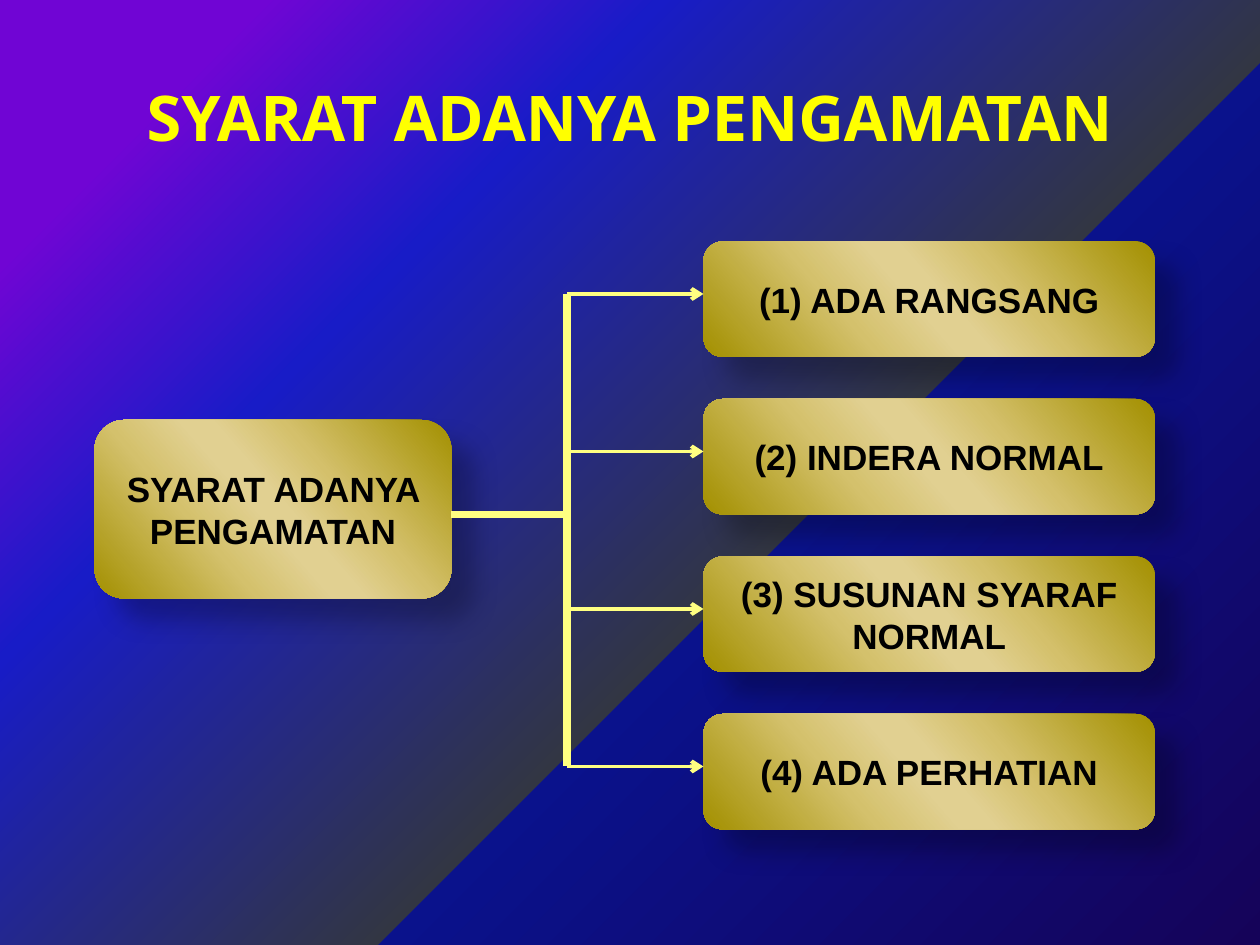
from lxml.etree import SubElement
from pptx import Presentation
from pptx.dml.color import RGBColor
from pptx.enum.shapes import MSO_CONNECTOR as CONN, MSO_SHAPE as SHAPE
from pptx.enum.text import MSO_ANCHOR as ANCHOR, PP_ALIGN as ALIGN
from pptx.oxml.ns import qn
from pptx.util import Inches, Pt

COLORS = {"title": "FFFF00", "text": "000000", "line": "FFFF81", "shadow": "000000"}
BACKDROP = [(0, "150359"), (40, "0A128C"), (40, "323643"), (70, "181CC7"), (88, "7005D4")]
GOLD = [(0, "A39000"), (33, "D4C06B"), (47, "E1D091"), (53, "E1D091"), (68, "D4C16C"), (100, "A39000")]
CONDITIONS = ["(1) ADA RANGSANG", "(2) INDERA NORMAL", "(3) SUSUNAN SYARAF NORMAL", "(4) ADA PERHATIAN"]
COLS, ROWS = 120, 90
PITCH = 15


def grid(*cells):
    """Turn grid cells, twelve to the inch, into lengths."""
    return [Inches(c / 12) for c in cells]


def add(parent, tag, **attrs):
    """Append a DrawingML child with the given attributes."""
    return SubElement(parent, qn(f"a:{tag}"), {k: str(v) for k, v in attrs.items()})


def set_gradient(fill, holder, stops):
    """Give a fill the listed stops and return its emptied gradient element."""
    fill.gradient()
    grad = next(holder.iter(qn("a:gradFill")))
    for child in list(grad):
        grad.remove(child)
    gs_list = add(grad, "gsLst")
    for pos, color in stops:
        add(add(gs_list, "gs", pos=pos * 1000), "srgbClr", val=color)
    return grad


def paint_background(slide):
    """Spread the backdrop colours from the lower right corner."""
    grad = set_gradient(slide.background.fill, slide.element, BACKDROP)
    add(add(grad, "path", path="circle"), "fillToRect", l=100000, t=100000)
    add(grad, "tileRect", r=-100000, b=-100000)


def set_text(s, text, font, size, color):
    """Write bold centred text in the middle of a shape."""
    tf = s.text_frame
    tf.word_wrap = True
    tf.vertical_anchor = ANCHOR.MIDDLE
    p = tf.paragraphs[0]
    p.text = text
    p.alignment = ALIGN.CENTER
    f = p.runs[0].font
    f.name, f.size, f.bold = font, Pt(size), True
    f.color.rgb = RGBColor.from_string(COLORS[color])


def add_title(slide, box, text):
    """Place the slide heading in its box."""
    set_text(slide.shapes.add_textbox(*grid(*box)), text, "Open Sans", 36, "title")


def add_card(slide, box, text):
    """Place a rounded gold card with a soft shadow."""
    s = slide.shapes.add_shape(SHAPE.ROUNDED_RECTANGLE, *grid(*box))
    grad = set_gradient(s.fill, s.element.spPr, GOLD)
    add(grad, "lin", ang=139 * 60000, scaled=0)
    s.line.fill.background()
    s.shadow.inherit = False
    shadow = add(s.element.spPr.find(qn("a:effectLst")), "outerShdw", blurRad=Pt(15),
                 dist=Pt(18), dir=45 * 60000, algn="tl", rotWithShape=0)
    add(add(shadow, "srgbClr", val=COLORS["shadow"]), "alpha", val=26000)
    set_text(s, text, "Arial", 20, "text")


def add_line(slide, ends, width, arrow=False):
    """Draw a straight line, with an arrowhead if asked."""
    s = slide.shapes.add_connector(CONN.STRAIGHT, *grid(*ends))
    s.line.width = Pt(width)
    s.line.color.rgb = RGBColor.from_string(COLORS["line"])
    if arrow:
        add(s.line._get_or_add_ln(), "tailEnd", type="arrow")
    add(s.element.spPr, "effectLst")


def add_tree(slide, box):
    """Branch from the root card to one card for each condition."""
    x, y, w, h = box
    root_w, root_h, card_w, card_h = 34, 17, 43, 11
    trunk, card_x = x + 45, x + w - card_w
    levels = [y + 5 + i * PITCH for i in range(len(CONDITIONS))]
    add_card(slide, (x, y + 17, root_w, root_h), "SYARAT ADANYA PENGAMATAN")
    for i, text in enumerate(CONDITIONS):
        add_card(slide, (card_x, y + i * PITCH, card_w, card_h), text)
    add_line(slide, (trunk, levels[0], trunk, levels[-1]), 4.5)
    add_line(slide, (trunk, y + 26, x + root_w, y + 26), 4.5)
    for level in levels:
        add_line(slide, (trunk, level, card_x, level), 2.25, arrow=True)


def main():
    """Build and save the slide."""
    prs = Presentation()
    prs.slide_width, prs.slide_height = grid(COLS, ROWS)
    slide = prs.slides.add_slide(prs.slide_layouts[6])
    paint_background(slide)
    add_title(slide, (6, 3.6, 108, 15), "SYARAT ADANYA PENGAMATAN")
    add_tree(slide, (9, 23, 101, 56))
    prs.save("out.pptx")


if __name__ == "__main__":
    main()
